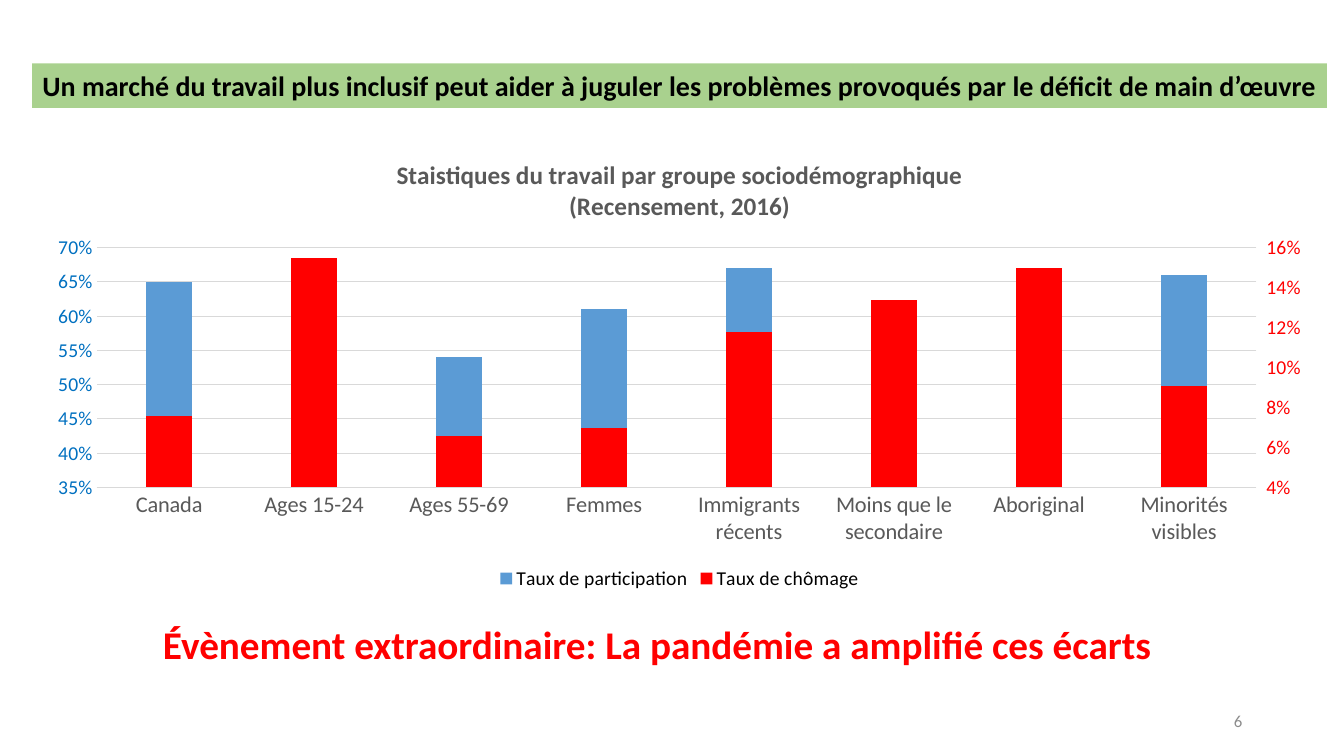
from copy import deepcopy

from pptx import Presentation
from pptx.chart.axis import CategoryAxis, ValueAxis
from pptx.chart.data import CategoryChartData
from pptx.dml.color import RGBColor
from pptx.enum.chart import XL_CHART_TYPE, XL_LEGEND_POSITION, XL_TICK_MARK
from pptx.enum.shapes import MSO_SHAPE
from pptx.enum.text import MSO_ANCHOR, PP_ALIGN
from pptx.oxml.ns import qn
from pptx.util import Inches, Pt

COLUMN = XL_CHART_TYPE.COLUMN_CLUSTERED
BOTTOM = XL_LEGEND_POSITION.BOTTOM
NO_TICK, OUT_TICK = XL_TICK_MARK.NONE, XL_TICK_MARK.OUTSIDE
RECT = MSO_SHAPE.RECTANGLE
CENTER, RIGHT = PP_ALIGN.CENTER, PP_ALIGN.RIGHT
TOP, MIDDLE = MSO_ANCHOR.TOP, MSO_ANCHOR.MIDDLE

FONT = "Calibri"
BLACK = RGBColor(0x00, 0x00, 0x00)
RED = RGBColor(0xFF, 0x00, 0x00)
GREEN = RGBColor(0xA9, 0xD1, 0x8E)
BLUE = RGBColor(0x5B, 0x9B, 0xD5)
DEEP_BLUE = RGBColor(0x00, 0x70, 0xC0)
DARK = RGBColor(0x59, 0x59, 0x59)
GRAY = RGBColor(0x8C, 0x8C, 0x8C)
PALE = RGBColor(0xD9, 0xD9, 0xD9)

GROUPS = ["Canada", "Ages 15-24", "Ages 55-69", "Femmes", "Immigrants récents",
          "Moins que le secondaire", "Aboriginal", "Minorités visibles"]
ACTIVE = [0.65, 0.62, 0.54, 0.61, 0.67, 0.38, 0.62, 0.66]
JOBLESS = [0.076, 0.155, 0.066, 0.07, 0.118, 0.134, 0.15, 0.091]
TITLE = "Staistiques du travail par groupe sociodémographique\n(Recensement, 2016)"


def set_font(font, size, color, bold=False):
    font.name, font.size, font.bold = FONT, Pt(size), bold
    font.color.rgb = color


def write(frame, text, size=18, color=BLACK, bold=False, align=CENTER,
          anchor=TOP, wrap=True):
    frame.word_wrap = wrap
    frame.vertical_anchor = anchor
    frame.text = text
    for para in frame.paragraphs:
        para.alignment = align
        set_font(para.runs[0].font, size, color, bold)


def add_text(slide, box, text, **style):
    shape = slide.shapes.add_textbox(*map(Inches, box))
    write(shape.text_frame, text, **style)


def add_banner(slide, box, text, **style):
    shape = slide.shapes.add_shape(RECT, *map(Inches, box))
    shape.shadow.inherit = False
    shape.fill.solid()
    shape.fill.fore_color.rgb = GREEN
    shape.line.fill.background()
    write(shape.text_frame, text, **style)


def set_scale(axis, low, high, step, color, tick):
    axis.minimum_scale, axis.maximum_scale = low, high
    axis.major_unit = step
    axis.major_tick_mark, axis.minor_tick_mark = tick, NO_TICK
    axis.format.line.fill.background()
    labels = axis.tick_labels
    labels.number_format, labels.number_format_is_linked = "0%", False
    set_font(labels.font, 14, color)


def split_axes(chart):
    """Move the last series to its own plot and return its right-hand axis."""
    plot = chart.plots[0]._element
    bars = deepcopy(plot)
    plot.addnext(bars)
    plot.remove(plot.findall(qn("c:ser"))[1])
    bars.remove(bars.findall(qn("c:ser"))[0])

    base, left = chart.category_axis._element, chart.value_axis._element
    hidden, right = deepcopy(base), deepcopy(left)
    left.addnext(right)
    right.addnext(hidden)
    ids = ("50010", "50020")
    for ref, num in zip(bars.findall(qn("c:axId")), ids):
        ref.set("val", num)
    for axis, own, other in ((hidden, *ids), (right, *ids[::-1])):
        axis.find(qn("c:axId")).set("val", own)
        axis.find(qn("c:crossAx")).set("val", other)
    right.find(qn("c:axPos")).set("val", "r")
    right.find(qn("c:crosses")).set("val", "max")
    CategoryAxis(hidden).visible = False
    return ValueAxis(right)


def add_rates(slide, box):
    data = CategoryChartData(number_format="0%")
    data.categories = GROUPS
    data.add_series("Taux de participation", ACTIVE)
    data.add_series("Taux de chômage", JOBLESS)
    chart = slide.shapes.add_chart(COLUMN, *map(Inches, box), data).chart
    set_font(chart.font, 10, BLACK)

    # Title and legend
    chart.has_title = True
    write(chart.chart_title.text_frame, TITLE, size=18, color=DARK, bold=True)
    chart.chart_title.include_in_layout = False
    chart.has_legend = True
    chart.legend.position = BOTTOM
    chart.legend.include_in_layout = False
    set_font(chart.legend.font, 14, BLACK)

    # Columns
    plot = chart.plots[0]
    plot.gap_width = 219
    plot.vary_by_categories = False
    for series, color in zip(plot.series, (BLUE, RED)):
        series.invert_if_negative = False
        series.format.fill.solid()
        series.format.fill.fore_color.rgb = color

    # Axes
    base, left = chart.category_axis, chart.value_axis
    base.major_tick_mark = base.minor_tick_mark = NO_TICK
    set_font(base.tick_labels.font, 16, DARK)
    left.has_major_gridlines = True
    for line in (base.format.line, left.major_gridlines.format.line):
        line.color.rgb = PALE
        line.width = Pt(0.75)
    right = split_axes(chart)
    right.has_major_gridlines = False
    set_scale(left, 0.35, 0.7, 0.05, DEEP_BLUE, NO_TICK)
    set_scale(right, 0.04, 0.16, 0.02, RED, OUT_TICK)


def main():
    deck = Presentation()
    deck.slide_width, deck.slide_height = Inches(13.33), Inches(7.5)
    slide = deck.slides.add_slide(deck.slide_layouts[6])

    # Page number
    add_text(slide, (9.42, 6.95, 3, 0.4), "6", size=12, color=GRAY,
             align=RIGHT, anchor=MIDDLE)
    # Headline
    add_banner(slide, (0.32, 0.63, 12.84, 0.44),
               "Un marché du travail plus inclusif peut aider à juguler les "
               "problèmes provoqués par le déficit de main d’œuvre",
               size=20, bold=True, wrap=False)
    # Closing message
    add_text(slide, (0.79, 6.1, 11.45, 0.57),
             "Évènement extraordinaire: La pandémie a amplifié ces écarts",
             size=28, color=RED, bold=True)
    # Labour rates
    add_rates(slide, (0.32, 1.4, 12.84, 4.5))

    deck.save("out.pptx")


if __name__ == "__main__":
    main()
